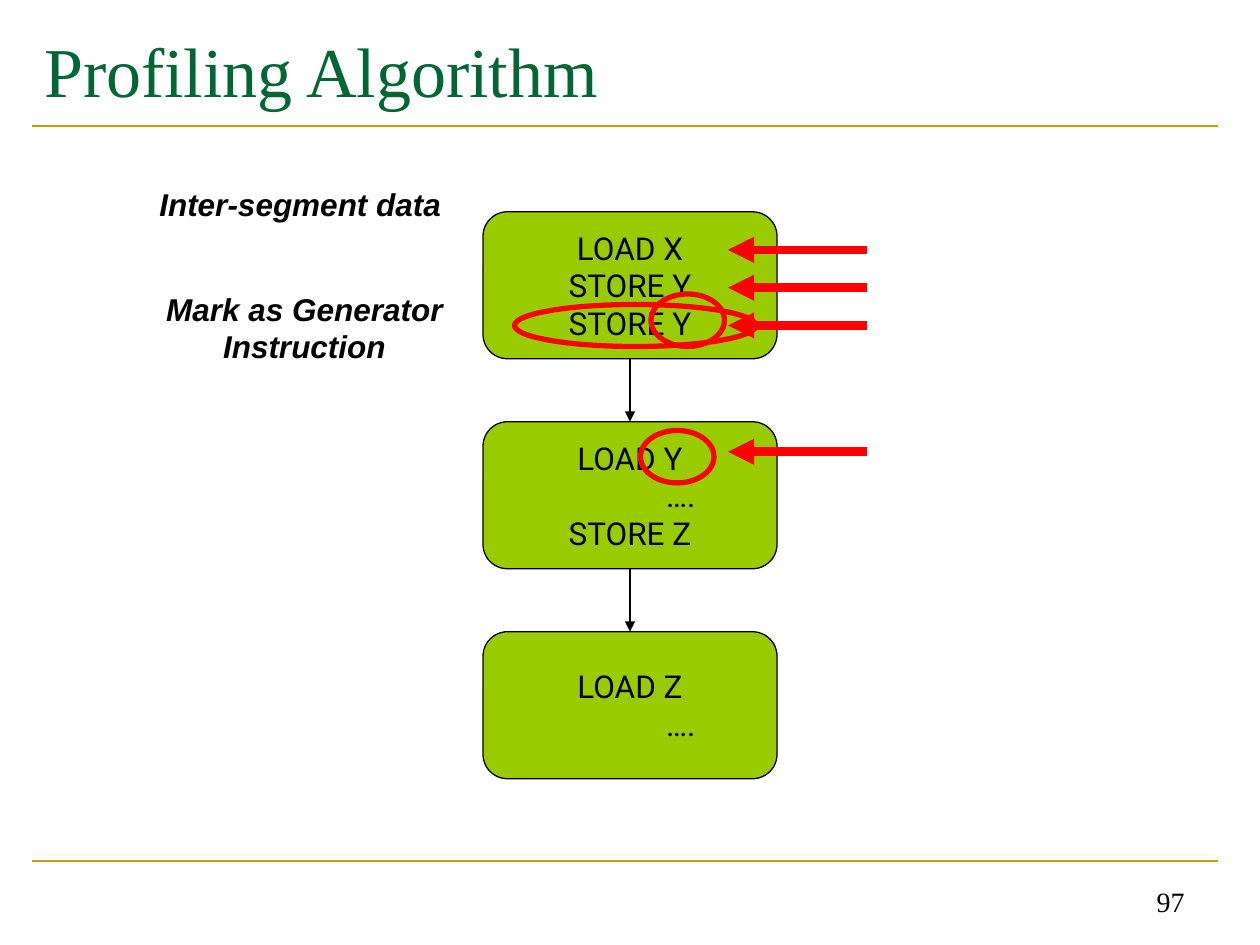
from lxml.etree import SubElement
from pptx import Presentation
from pptx.dml.color import RGBColor
from pptx.enum.shapes import MSO_CONNECTOR, MSO_SHAPE
from pptx.enum.text import MSO_ANCHOR, MSO_AUTO_SIZE, PP_ALIGN
from pptx.oxml.ns import qn
from pptx.util import Pt

BLACK, RED, GOLD, GREEN, LIME = "000000", "FF0000", "CC9900", "006633", "99CC00"

TITLE = "Profiling Algorithm"
PAGE_NUMBER = "97"
SEGMENTS = [
    ["LOAD X", "STORE Y", "STORE Y"],
    ["LOAD Y", "….", "STORE Z"],
    ["LOAD Z", "…."],
]
LABELS = [
    ("Inter-segment data", 102, 29, PP_ALIGN.LEFT),
    ("Mark as Generator Instruction", 162, 50, PP_ALIGN.CENTER),
]
RULE_TOPS = [72, 492]
POINTER_TOPS = [142.8, 164.4, 186, 258.2]
RINGS = [(294, 174, 138, 24), (372, 168, 42, 30), (366, 246, 42, 30)]

SEGMENT_LEFT, SEGMENT_TOP = 276, 121
SEGMENT_WIDTH, SEGMENT_HEIGHT, SEGMENT_GAP = 168, 84, 36
DOTS_INDENT = 58


def color(value):
    return RGBColor.from_string(value)


def add_line(page, start, end, line_color, width, arrow=False):
    line = page.shapes.add_connector(
        MSO_CONNECTOR.STRAIGHT, *map(Pt, start), *map(Pt, end))
    line.line.color.rgb = color(line_color)
    line.line.width = Pt(width)
    if arrow:
        SubElement(line.line._get_or_add_ln(), qn("a:tailEnd"), type="triangle")
    SubElement(line._element.spPr, qn("a:effectLst"))


def add_outlined(page, kind, place, line_color, width, fill=None):
    shape = page.shapes.add_shape(kind, *map(Pt, place))
    shape.shadow.inherit = False
    if fill:
        shape.fill.solid()
        shape.fill.fore_color.rgb = color(fill)
    else:
        shape.fill.background()
    shape.line.color.rgb = color(line_color)
    shape.line.width = Pt(width)
    return shape


def write(shape, lines, font, size, text_color, align, anchor, strong=False):
    frame = shape.text_frame
    frame.word_wrap = True
    frame.auto_size = MSO_AUTO_SIZE.NONE
    frame.vertical_anchor = anchor
    frame.text = "\n".join(lines)
    for para in frame.paragraphs:
        para.alignment = align
        para.font.name = font
        para.font.size = Pt(size)
        para.font.color.rgb = color(text_color)
        para.font.bold = para.font.italic = strong
    return frame


def add_text(page, place, *style):
    return write(page.shapes.add_textbox(*map(Pt, place)), *style)


def main():
    deck = Presentation()
    deck.slide_width, deck.slide_height = Pt(720), Pt(540)
    page = deck.slides.add_slide(deck.slide_layouts[5])

    title = page.shapes.title
    title.left, title.top, title.width, title.height = map(Pt, (18, 12, 678, 84))
    write(title, [TITLE], "Times New Roman", 40, GREEN, PP_ALIGN.LEFT, MSO_ANCHOR.TOP)
    for top in RULE_TOPS:
        add_line(page, (18, top), (696, top), GOLD, 1.5)
    add_text(page, (516, 492, 168, 36), [PAGE_NUMBER], "Times New Roman", 16, BLACK,
             PP_ALIGN.RIGHT, MSO_ANCHOR.BOTTOM)

    middle = SEGMENT_LEFT + SEGMENT_WIDTH / 2
    for index, lines in enumerate(SEGMENTS):
        top = SEGMENT_TOP + index * (SEGMENT_HEIGHT + SEGMENT_GAP)
        box = add_outlined(page, MSO_SHAPE.ROUNDED_RECTANGLE,
                           (SEGMENT_LEFT, top, SEGMENT_WIDTH, SEGMENT_HEIGHT),
                           BLACK, 0.75, LIME)
        frame = write(box, lines, "Roboto", 18, BLACK, PP_ALIGN.CENTER, MSO_ANCHOR.MIDDLE)
        for para in frame.paragraphs:
            if para.text == "….":
                para._p.get_or_add_pPr().set("marL", str(Pt(DOTS_INDENT)))
        if index:
            add_line(page, (middle, top - SEGMENT_GAP), (middle, top), BLACK, 0.75, True)

    for top in POINTER_TOPS:
        add_line(page, (495.5, top), (416, top), RED, 5, True)
    for place in RINGS:
        add_outlined(page, MSO_SHAPE.OVAL, place, RED, 3)
    for text, top, height, align in LABELS:
        add_text(page, (84, top, 180, height), [text], "Arial", 18, BLACK,
                 align, MSO_ANCHOR.TOP, True)

    deck.save("out.pptx")


if __name__ == "__main__":
    main()
